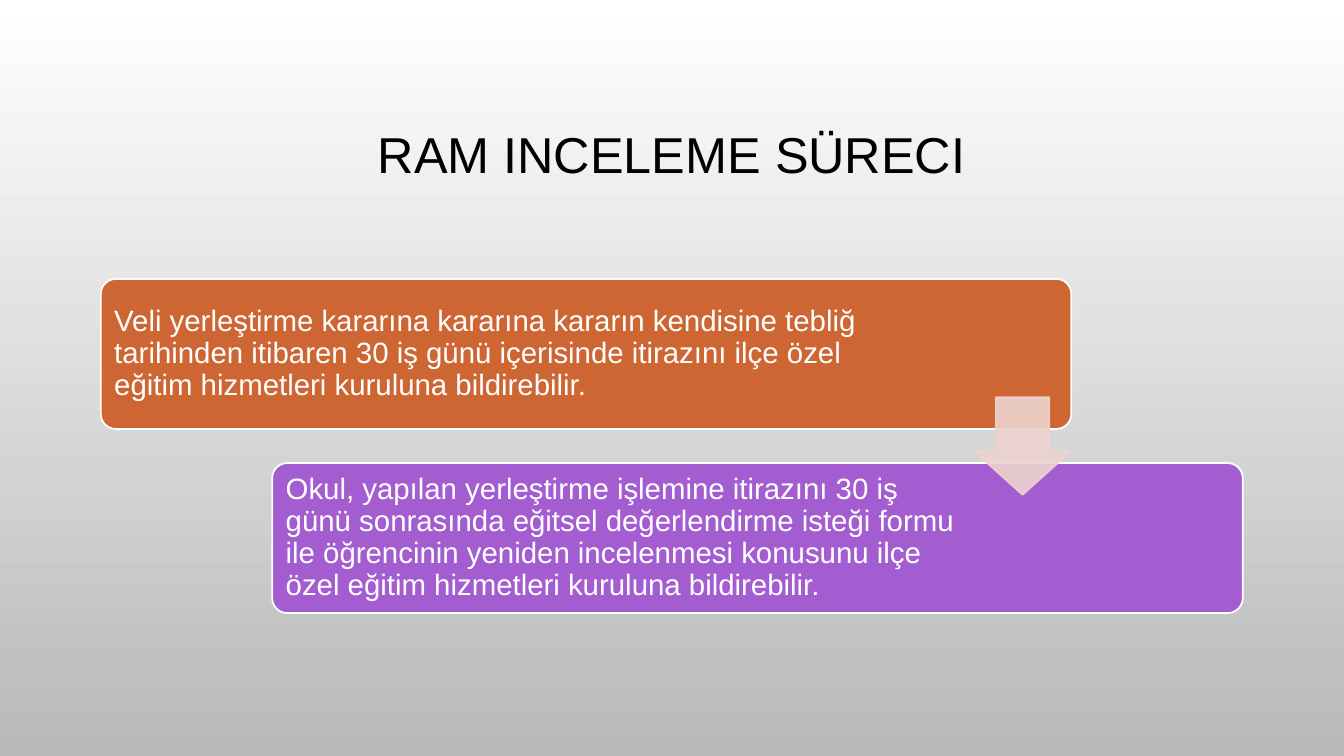
from dataclasses import dataclass

from lxml.etree import SubElement
from pptx import Presentation
from pptx.dml.color import RGBColor
from pptx.enum.shapes import MSO_SHAPE as Preset
from pptx.enum.text import MSO_ANCHOR as Anchor, PP_ALIGN as Align
from pptx.oxml.ns import qn
from pptx.shapes.autoshape import Shape
from pptx.slide import Slide
from pptx.util import Cm, Pt


@dataclass(frozen=True)
class Theme:
    font: str = "Arial"
    title_size: float = 36
    body_size: float = 21
    outline_width: float = 1.25
    black: str = "000000"
    white: str = "FFFFFF"
    grey: str = "B9B9B9"
    orange: str = "CE6633"
    purple: str = "A35DD1"
    arrow: str = "EDD3CE"
    arrow_opacity: int = 90


@dataclass(frozen=True)
class Box:
    """A rectangle in centimetres."""
    left: float
    top: float
    width: float
    height: float

    def lengths(self) -> tuple[Cm, Cm, Cm, Cm]:
        return Cm(self.left), Cm(self.top), Cm(self.width), Cm(self.height)


@dataclass(frozen=True)
class Step:
    text: str
    color: str
    text_width: float


THEME = Theme()
TITLE_BOX = Box(2.54, 1.73, 28.78, 4.45)
FIRST_CARD = Box(2.54, 7.03, 24.46, 3.78)
STEP_RIGHT, STEP_DOWN = 4.32, 4.64
CARD_PADDING = 0.11
TEXT_INSET = 0.23
ARROW_SIZE = 2.46

STEPS = (
    Step("Veli yerleştirme kararına kararına kararın kendisine tebliğ tarihinden "
         "itibaren 30 iş günü içerisinde itirazını ilçe özel eğitim hizmetleri "
         "kuruluna bildirebilir.", THEME.orange, 20.55),
    Step("Okul, yapılan yerleştirme işlemine itirazını 30 iş günü sonrasında "
         "eğitsel değerlendirme isteği formu ile öğrencinin yeniden incelenmesi "
         "konusunu ilçe özel eğitim hizmetleri kuruluna bildirebilir.",
         THEME.purple, 17.48),
)


def color(value: str) -> RGBColor:
    return RGBColor.from_string(value)


def add_text(slide: Slide, box: Box, text: str, size: float, text_color: str,
             align: Align) -> None:
    frame = slide.shapes.add_textbox(*box.lengths()).text_frame
    frame.word_wrap = True
    frame.vertical_anchor = Anchor.MIDDLE
    frame.margin_left = frame.margin_right = Cm(TEXT_INSET)
    frame.margin_top = frame.margin_bottom = Cm(TEXT_INSET)
    paragraph = frame.paragraphs[0]
    paragraph.text = text
    paragraph.alignment = align
    paragraph.line_spacing = 0.9
    paragraph.font.name = THEME.font
    paragraph.font.size = Pt(size)
    paragraph.font.color.rgb = color(text_color)


def add_preset(slide: Slide, preset: Preset, box: Box, fill: str, outline: str,
               adjustments: tuple[float, ...]) -> Shape:
    shape = slide.shapes.add_shape(preset, *box.lengths())
    shape.shadow.inherit = False
    for index, value in enumerate(adjustments):
        shape.adjustments[index] = value
    shape.fill.solid()
    shape.fill.fore_color.rgb = color(fill)
    shape.line.color.rgb = color(outline)
    shape.line.width = Pt(THEME.outline_width)
    return shape


def set_opacity(shape: Shape, percent: int) -> None:
    """Apply to the fill and the outline alike."""
    for element in shape.element.spPr.iter(qn("a:srgbClr")):
        SubElement(element, qn("a:alpha"), val=str(percent * 1000))


def add_background(slide: Slide) -> None:
    fill = slide.background.fill
    fill.gradient()
    fill.gradient_angle = 270
    for stop, value in zip(fill.gradient_stops, (THEME.white, THEME.grey)):
        stop.color.rgb = color(value)


def add_step(slide: Slide, index: int, step: Step) -> None:
    card = Box(FIRST_CARD.left + index * STEP_RIGHT,
               FIRST_CARD.top + index * STEP_DOWN,
               FIRST_CARD.width, FIRST_CARD.height)
    add_preset(slide, Preset.ROUNDED_RECTANGLE, card, step.color, THEME.white, (0.1,))
    text_box = Box(card.left + CARD_PADDING, card.top + CARD_PADDING,
                   step.text_width, card.height - 2 * CARD_PADDING)
    add_text(slide, text_box, step.text, THEME.body_size, THEME.white, Align.LEFT)


def add_arrow(slide: Slide) -> None:
    # Flush with the first card's right edge, centred on the gap between cards
    gap_middle = FIRST_CARD.top + (FIRST_CARD.height + STEP_DOWN) / 2
    box = Box(FIRST_CARD.left + FIRST_CARD.width - ARROW_SIZE,
              gap_middle - ARROW_SIZE / 2, ARROW_SIZE, ARROW_SIZE)
    # The head length is the second adjustment, the shaft width the first
    arrow = add_preset(slide, Preset.DOWN_ARROW, box, THEME.arrow, THEME.arrow,
                       (0.55, 0.45))
    set_opacity(arrow, THEME.arrow_opacity)


def main() -> None:
    presentation = Presentation()
    presentation.slide_width, presentation.slide_height = Cm(33.87), Cm(19.05)
    slide = presentation.slides.add_slide(presentation.slide_layouts[6])

    # Background and title
    add_background(slide)
    add_text(slide, TITLE_BOX, "RAM INCELEME SÜRECI", THEME.title_size,
             THEME.black, Align.CENTER)

    # Staggered steps and the arrow between them
    for index, step in enumerate(STEPS):
        add_step(slide, index, step)
    add_arrow(slide)

    presentation.save("out.pptx")


if __name__ == "__main__":
    main()
